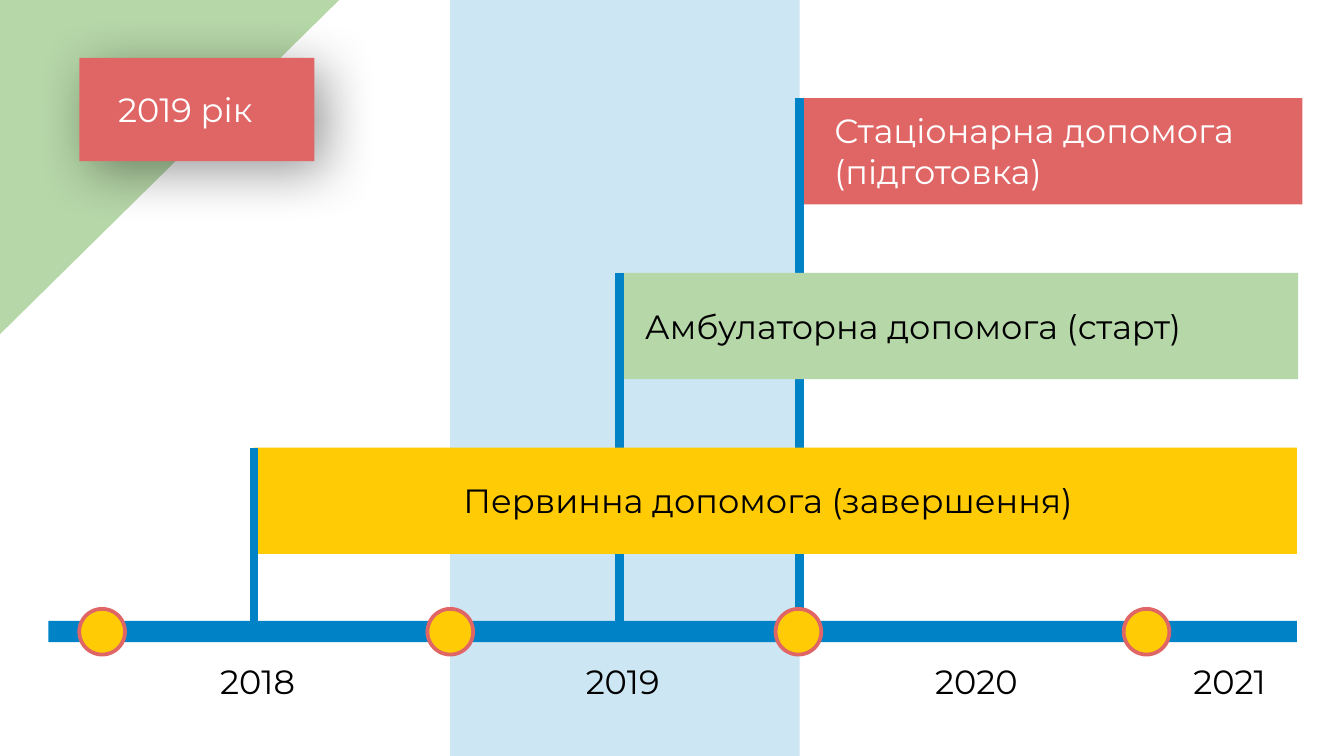
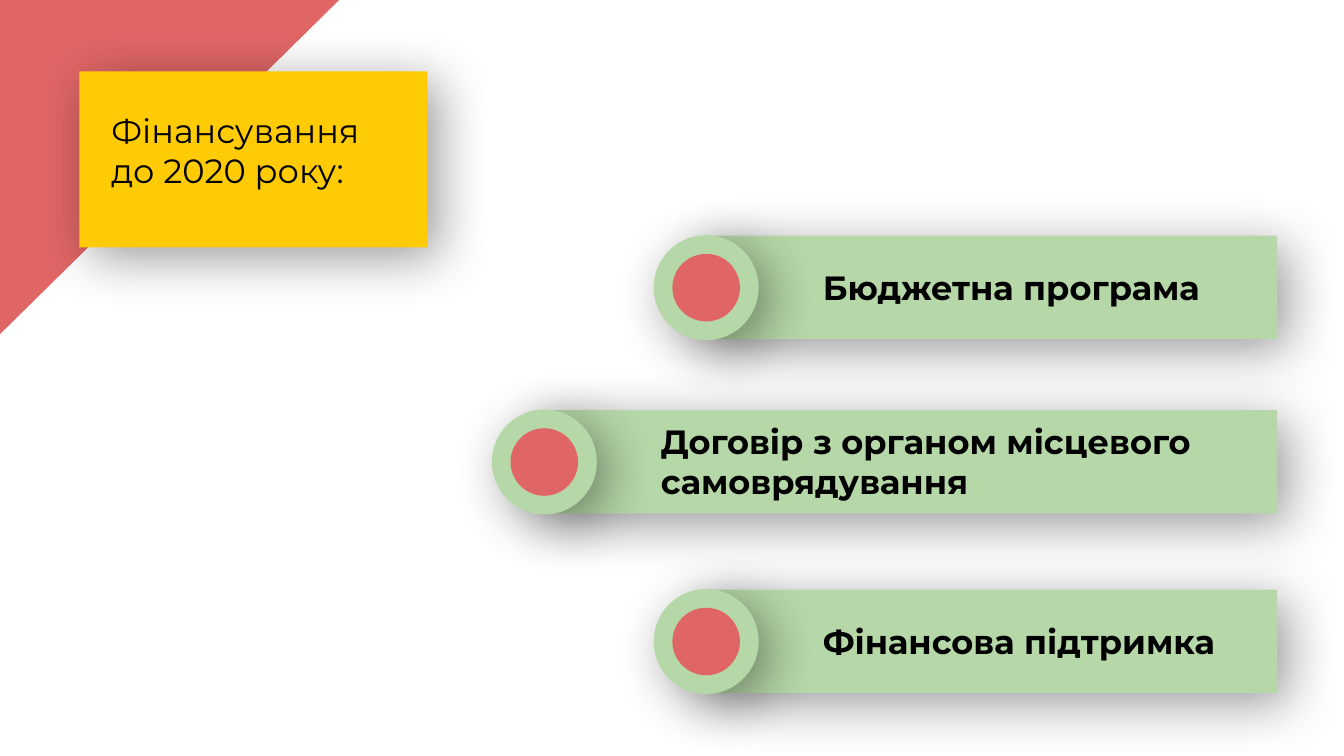
"""Builds two slides on the medical care timeline and its funding until 2020."""
import lxml.etree
import pptx
import pptx.dml.color
import pptx.enum.shapes
import pptx.enum.text
import pptx.oxml.ns
import pptx.util

Pt = pptx.util.Pt
hue = pptx.dml.color.RGBColor.from_string
qn = pptx.oxml.ns.qn
kinds = pptx.enum.shapes.MSO_SHAPE

BLUE, RED, GREEN, GOLD = "0082C6", "E06666", "B6D7A8", "FFCB05"
BLACK, WHITE = "000000", "FFFFFF"
FONT, SIZE = "Montserrat", 18


def draw(shapes, kind, left, top, width, height, fill, soft=False):
    """Add a plain filled shape, with a soft shadow if asked."""
    shape = shapes.add_shape(kind, Pt(left), Pt(top), Pt(width), Pt(height))
    shape.shadow.inherit = False
    shape.fill.solid()
    shape.fill.fore_color.rgb = hue(fill)
    shape.line.fill.background()
    if soft:
        fx = shape._element.spPr.find(qn("a:effectLst"))
        shade = lxml.etree.SubElement(
            fx, qn("a:outerShdw"), blurRad=str(Pt(29)), dist=str(Pt(8)),
            dir="2700000", algn="tl", rotWithShape="0")
        tone = lxml.etree.SubElement(shade, qn("a:srgbClr"), val=BLACK)
        lxml.etree.SubElement(tone, qn("a:alpha"), val="40000")
    return shape


def write(shapes, text, left, top, width, height, color=BLACK, bold=False):
    """Add a text box in the common type."""
    box = shapes.add_textbox(Pt(left), Pt(top), Pt(width), Pt(height))
    frame = box.text_frame
    frame.word_wrap = True
    frame.auto_size = pptx.enum.text.MSO_AUTO_SIZE.SHAPE_TO_FIT_TEXT
    frame.text = text
    for para in frame.paragraphs:
        for run in para.runs:
            run.font.name = FONT
            run.font.size = Pt(SIZE)
            run.font.bold = bold
            run.font.color.rgb = hue(color)


deck = pptx.Presentation()
deck.slide_width, deck.slide_height = Pt(720), Pt(405)
blank = deck.slide_layouts[6]
plan = deck.slides.add_slide(blank).shapes
funds = deck.slides.add_slide(blank).shapes

band = draw(plan, kinds.RECTANGLE, 241.2, -18.7, 187.2, 436.3, BLUE)
tint = band._element.spPr.find(qn("a:solidFill")).find(qn("a:srgbClr"))
lxml.etree.SubElement(tint, qn("a:alpha"), val="20000")

stages = [
    ("Стаціонарна допомога\n(підготовка)", 428.4, 697.7, 439.9, 254.9, 51.1, RED, WHITE),
    ("Амбулаторна допомога (старт)", 331.9, 695.5, 338.4, 333.4, 28.8, GREEN, BLACK),
    ("Первинна допомога (завершення)", 136.1, 694.8, 241.2, 373, 28.8, GOLD, BLACK),
]
for row, (text, left, right, start, width, height, fill, ink) in enumerate(stages):
    top = 52.6 + 93.6 * row
    group = plan.add_group_shape().shapes
    draw(group, kinds.RECTANGLE, left, top, right - left, 56.9, fill)
    write(group, text, start, top + (56.9 - height) / 2, width, height, ink)
    pole = plan.add_connector(
        pptx.enum.shapes.MSO_CONNECTOR.STRAIGHT, Pt(left), Pt(top), Pt(left), Pt(333.4))
    pole.line.color.rgb = hue(BLUE)
    pole.line.width = Pt(4.5)
    lxml.etree.SubElement(pole._element.spPr, qn("a:effectLst"))

draw(plan, kinds.RECTANGLE, 25.9, 332.6, 668.9, 11.5, BLUE)
for step in range(4):
    dot = draw(plan, kinds.OVAL, 42.5 + 186.5 * step, 326.2, 24.5, 24.5, GOLD)
    dot.line.color.rgb = hue(RED)
    dot.line.width = Pt(2)
for year, left in enumerate([110.9, 306.7, 493.9, 632.2], 2018):
    write(plan, str(year), left, 350.6, 63.4, 28.8)

heads = [
    (plan, GREEN, RED, WHITE, "2019 рік", (42.5, 31, 126, 55.4), (56.2, 43.9, 98.6, 28.8)),
    (funds, RED, GOLD, BLACK, "Фінансування до 2020 року:",
     (42.5, 38.2, 186.5, 94.3), (52.6, 55.4, 165.6, 51.1)),
]
for shapes, back, fill, ink, text, card, place in heads:
    corner = draw(shapes, kinds.RIGHT_TRIANGLE, -35.3, -28.8, 242.6, 246.2, back)
    corner.rotation = 90
    draw(shapes, kinds.RECTANGLE, *card, fill, soft=True)
    write(shapes, text, *place, ink)

means = [
    ("Бюджетна програма", 350.2, 126, 28.8),
    ("Договір з органом місцевого самоврядування", 263.5, 219.4, 51.1),
    ("Фінансова підтримка", 350.2, 315.6, 28.8),
]
for text, left, top, height in means:
    group = funds.add_group_shape().shapes
    draw(group, kinds.RECTANGLE, left + 28, top + 0.3, 656.2 - left, 55.4, GREEN, soft=True)
    draw(group, kinds.OVAL, left, top, 56.2, 56.2, GREEN, soft=True)
    draw(group, kinds.OVAL, left + 10, top + 10, 36.2, 36.2, RED)
    write(funds, text, left + 83.5, top + 28.1 - height / 2, 583.9 - left, height, bold=True)

deck.save("out.pptx")
